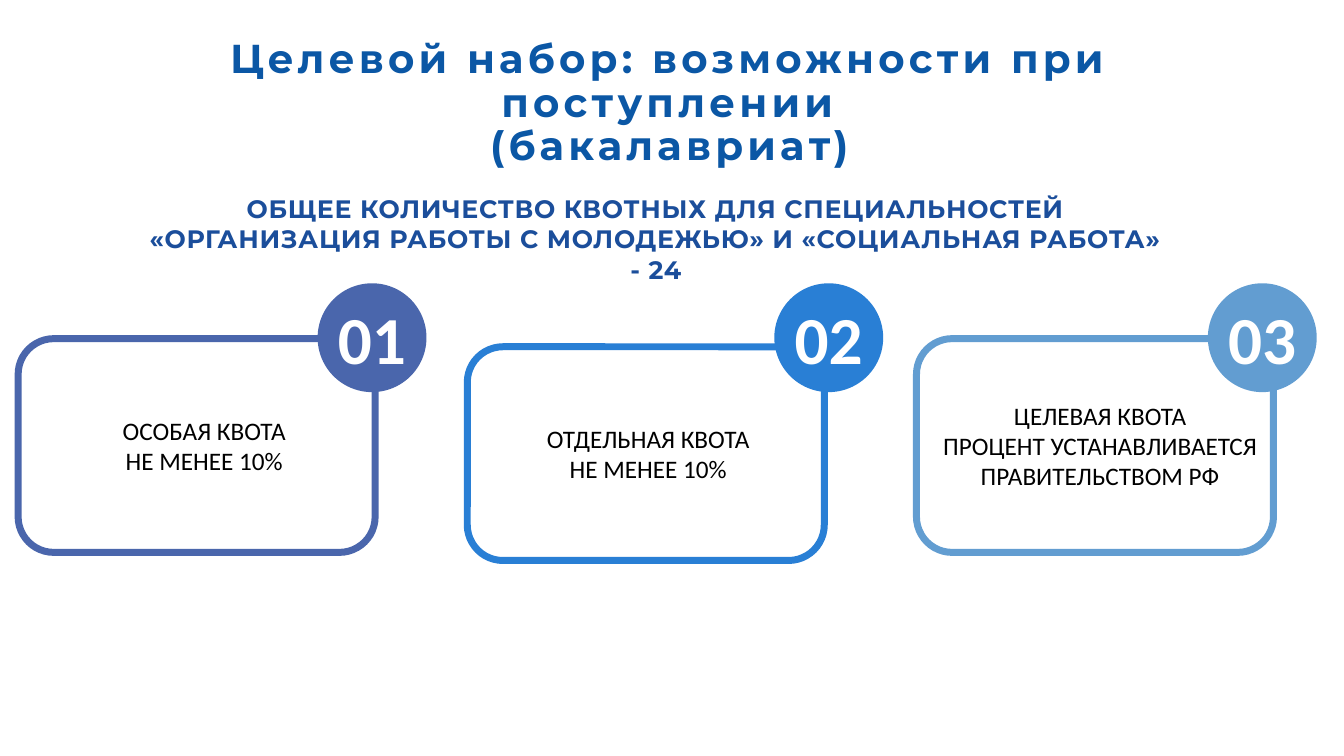
from pptx import Presentation
from pptx.dml.color import RGBColor
from pptx.enum.shapes import MSO_SHAPE
from pptx.enum.text import MSO_ANCHOR, MSO_AUTO_SIZE, PP_ALIGN
from pptx.util import Inches, Pt

ROUNDED, CIRCLE = MSO_SHAPE.ROUNDED_RECTANGLE, MSO_SHAPE.OVAL
TOP, MIDDLE, CENTER = MSO_ANCHOR.TOP, MSO_ANCHOR.MIDDLE, PP_ALIGN.CENTER
NO_AUTOFIT = MSO_AUTO_SIZE.NONE

COLORS = {
    "title": "0B57A5", "subtitle": "1B4E9B", "text": "000000", "white": "FFFFFF",
    "indigo": "4A66AC", "blue": "297FD5", "sky": "629DD1",
}

# Lengths are percentages of the slide's width and height
CARD_LEFT, CARD_STEP = 1.35, 33.42
CARD_WIDTH, CARD_HEIGHT = 26.56, 28.27
BADGE_TOP, BADGE_WIDTH, BADGE_HEIGHT = 37.47, 8.1, 14.4
LINE_HEIGHT, CAPTION_PADDING = 4.03, 1.4

# Color, card top, badge left, caption left and width, caption lines
QUOTAS = [
    ("indigo", 44.8, 23.63, 4.28, 21.83, ["ОСОБАЯ КВОТА", "НЕ МЕНЕЕ 10%"]),
    ("blue", 45.87, 57.61, 39.46, 17.55, ["ОТДЕЛЬНАЯ КВОТА", "НЕ МЕНЕЕ 10%"]),
    ("sky", 44.8, 89.87, 69.32, 25.06,
     ["ЦЕЛЕВАЯ КВОТА", "ПРОЦЕНТ УСТАНАВЛИВАЕТСЯ", "ПРАВИТЕЛЬСТВОМ РФ"]),
]


class QuotaSlide:
    def __init__(self, presentation):
        self.width = presentation.slide_width
        self.height = presentation.slide_height
        self.slide = presentation.slides.add_slide(presentation.slide_layouts[5])

    def box(self, left, top, width, height):
        return (int(self.width * left / 100), int(self.height * top / 100),
                int(self.width * width / 100), int(self.height * height / 100))

    def color(self, name):
        return RGBColor.from_string(COLORS[name])

    def set_text(self, shape, lines, size, color, font="Calibri", bold=False,
                 anchor=MIDDLE, spacing=0, line_spacing=1.0, wrap=True):
        frame = shape.text_frame
        frame.text = "\n".join(lines)
        frame.auto_size = NO_AUTOFIT
        frame.word_wrap = wrap
        frame.vertical_anchor = anchor
        for paragraph in frame.paragraphs:
            paragraph.alignment = CENTER
            paragraph.line_spacing = line_spacing
            paragraph.font.name = font
            paragraph.font.size = Pt(size)
            paragraph.font.bold = bold
            paragraph.font.color.rgb = self.color(color)
            if spacing:
                for run in paragraph.runs:
                    run._r.get_or_add_rPr().set("spc", str(int(spacing * 100)))

    def title(self, text, box):
        title = self.slide.shapes.title
        title.left, title.top, title.width, title.height = self.box(*box)
        self.set_text(title, [text], 28.8, "title", "Montserrat", True,
                      spacing=3, line_spacing=0.9)

    def text(self, lines, box, size, color, **style):
        shape = self.slide.shapes.add_textbox(*self.box(*box))
        self.set_text(shape, lines, size, color, **style)

    def card(self, box, color):
        shape = self.slide.shapes.add_shape(ROUNDED, *self.box(*box))
        shape.shadow.inherit = False
        shape.fill.background()
        shape.line.color.rgb = self.color(color)
        shape.line.width = Pt(5)

    def badge(self, number, box, color):
        shape = self.slide.shapes.add_shape(CIRCLE, *self.box(*box))
        shape.shadow.inherit = False
        shape.fill.solid()
        shape.fill.fore_color.rgb = self.color(color)
        shape.line.fill.background()
        self.set_text(shape, [f"{number:02}"], 48, "white", bold=True, wrap=False)


def main():
    presentation = Presentation()
    presentation.slide_width, presentation.slide_height = Inches(13.33), Inches(7.5)
    page = QuotaSlide(presentation)

    # Heading
    page.title("Целевой набор: возможности при поступлении\v(бакалавриат)",
               (6.68, 4.13, 86.27, 19.33))
    page.text(["ОБЩЕЕ КОЛИЧЕСТВО КВОТНЫХ ДЛЯ СПЕЦИАЛЬНОСТЕЙ «ОРГАНИЗАЦИЯ РАБОТЫ "
               "С МОЛОДЕЖЬЮ» И «СОЦИАЛЬНАЯ РАБОТА» - 24"],
              (10.13, 24.93, 77.34, 13.47), 18, "subtitle",
              font="Montserrat", bold=True, anchor=TOP, spacing=0.5)

    # Quota cards with numbered badges
    for index, (color, top, badge_left, left, width, lines) in enumerate(QUOTAS):
        page.card((CARD_LEFT + index * CARD_STEP, top, CARD_WIDTH, CARD_HEIGHT), color)
        page.badge(index + 1, (badge_left, BADGE_TOP, BADGE_WIDTH, BADGE_HEIGHT), color)
        height = len(lines) * LINE_HEIGHT + CAPTION_PADDING
        caption_top = top + (CARD_HEIGHT - height) / 2
        page.text(lines, (left, caption_top, width, height), 18, "text")

    presentation.save("out.pptx")


if __name__ == "__main__":
    main()
